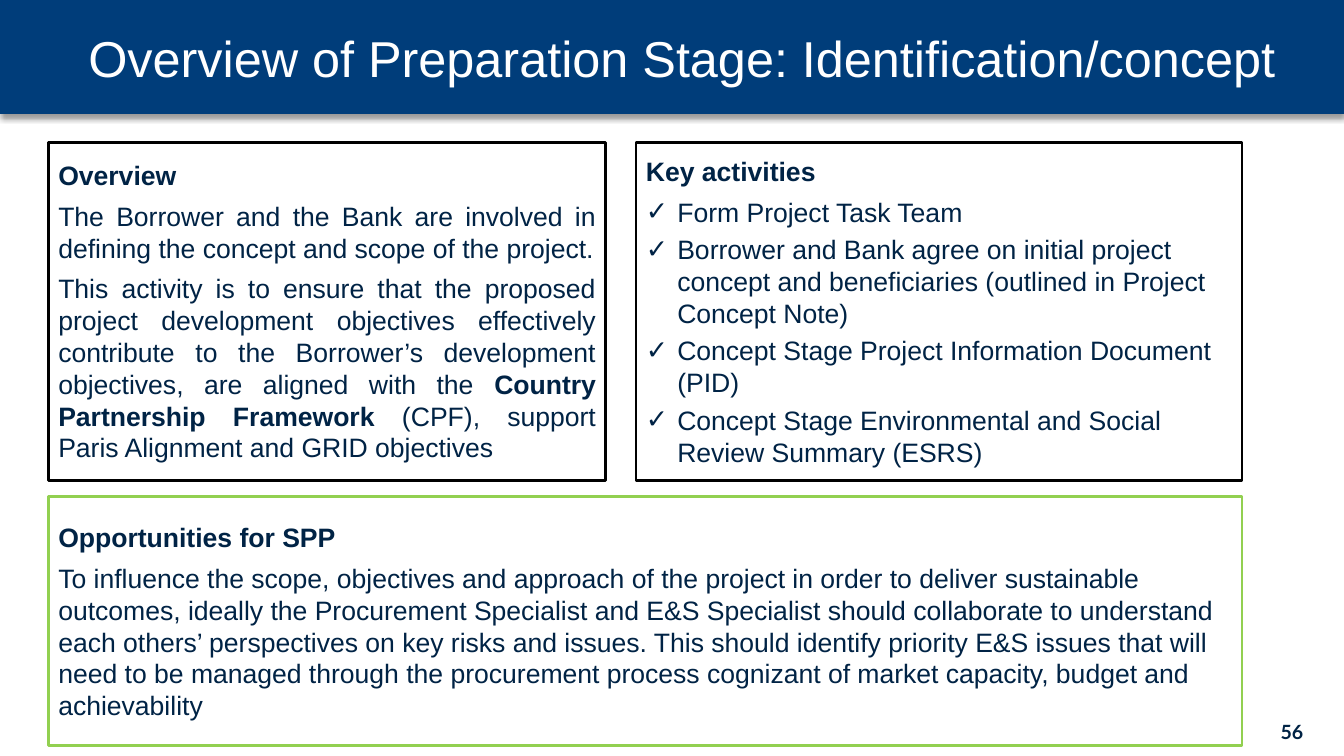
"""Build the slide on the identification and concept stage of a project."""
from lxml import etree
from pptx import Presentation
from pptx import util as u
from pptx.dml.color import RGBColor
from pptx.enum import shapes, text
from pptx.oxml.ns import qn

TITLE = "Overview of Preparation Stage: Identification/concept"
NUMBER = "56"
OVERVIEW = [
    [("Overview", True)],
    [("The Borrower and the Bank are involved in defining the concept and scope of the project.", False)],
    [("This activity is to ensure that the proposed project development objectives effectively "
      "contribute to the Borrower’s development objectives, are aligned with the ", False),
     ("Country Partnership Framework", True),
     (" (CPF), support Paris Alignment and GRID objectives", False)],
]
ACTIONS = [
    [("Key activities", True)],
    [("Form Project Task Team", False)],
    [("Borrower and Bank agree on initial project concept and beneficiaries "
      "(outlined in Project Concept Note)", False)],
    [("Concept Stage Project Information Document (PID)", False)],
    [("Concept Stage Environmental and Social Review Summary (ESRS)", False)],
]
CHANCES = [
    [("Opportunities for SPP", True)],
    [("To influence the scope, objectives and approach of the project in order to deliver "
      "sustainable outcomes, ideally the Procurement Specialist and E&S Specialist should "
      "collaborate to understand each others’ perspectives on key risks and issues. This should "
      "identify priority E&S issues that will need to be managed through the procurement process "
      "cognizant of market capacity, budget and achievability", False)],
]


class Theme:
    """Colours, fonts and type sizes."""
    navy, ink, white = "003D7A", "002345", "FFFFFF"
    black, green = "000000", "92D050"
    face, digit = "Arial", "Lato"
    head, body, small = 36, 19, 14


WIDE, HIGH, BAR = 33.87, 19.05, 2.87
LEFT, TOP, GAP = 1.22, 3.59, 0.76
FIRST, SECOND, TALL = 14.05, 15.27, 8.51
LOW, DEEP = 12.52, 6.27
J, L = text.PP_ALIGN.JUSTIFY, text.PP_ALIGN.LEFT
PANELS = [
    (OVERVIEW, (LEFT, TOP, FIRST, TALL), Theme.black, J, 6, False),
    (ACTIONS, (LEFT + FIRST + GAP, TOP, SECOND, TALL), Theme.black, L, 4, True),
    (CHANCES, (LEFT, LOW, FIRST + GAP + SECOND, DEEP), Theme.green, L, 6, False),
]


def put(item, **attrs):
    """Set each named attribute on an item."""
    for name, value in attrs.items():
        setattr(item, name, value)


def place(shape, box):
    """Move and size a shape in centimetres."""
    put(shape, **dict(zip(("left", "top", "width", "height"), map(u.Cm, box))))


def paint(fill, tone):
    """Give a fill one solid colour."""
    fill.solid()
    fill.fore_color.rgb = RGBColor.from_string(tone)


def style(font, size, tone, face=Theme.face, bold=False):
    """Format a font."""
    put(font, size=u.Pt(size), name=face, bold=bold)
    font.color.rgb = RGBColor.from_string(tone)


def frame(shape, margins):
    """Centre the text vertically, wrap it and set its margins."""
    sides = ("margin_left", "margin_top", "margin_right", "margin_bottom")
    put(shape.text_frame, word_wrap=True, auto_size=text.MSO_AUTO_SIZE.NONE,
        vertical_anchor=text.MSO_ANCHOR.MIDDLE, **dict(zip(sides, map(u.Cm, margins))))


def shade(shape):
    """Add a soft shadow below a shape."""
    shape.shadow.inherit = False
    glow = etree.SubElement(shape.element.spPr.find(qn("a:effectLst")), qn("a:outerShdw"),
                            blurRad=str(u.Pt(4)), dist=str(u.Pt(3)), dir="5400000",
                            algn="t", rotWithShape="0")
    tone = etree.SubElement(glow, qn("a:srgbClr"), val=Theme.black)
    etree.SubElement(tone, qn("a:alpha"), val="40000")


def tick(para):
    """Give a paragraph a hanging check mark."""
    props = para._p.get_or_add_pPr()
    hang = str(u.Cm(0.79))
    props.set("marL", hang)
    props.set("indent", "-" + hang)
    etree.SubElement(props, qn("a:buFont"), typeface=Theme.face)
    etree.SubElement(props, qn("a:buChar"), char="✓")


def panel(slide, rows, box, edge, align, gap, ticks):
    """Draw one outlined panel with its heading and paragraphs."""
    shape = slide.shapes.add_shape(shapes.MSO_SHAPE.RECTANGLE, *map(u.Cm, box))
    shape.shadow.inherit = False
    paint(shape.fill, Theme.white)
    paint(shape.line.fill, edge)
    shape.line.width = u.Pt(2)
    frame(shape, (0.25, 0.13, 0.25, 0.13))
    for i, row in enumerate(rows):
        para = shape.text_frame.paragraphs[0] if i == 0 else shape.text_frame.add_paragraph()
        last = i == len(rows) - 1 and align == L
        after = 0 if last else gap if i else 6
        put(para, alignment=align, space_after=u.Pt(after))
        if ticks and i:
            tick(para)
        for words, bold in row:
            run = para.add_run()
            run.text = words
            style(run.font, Theme.body, Theme.ink, bold=bold)


def label(shape, words, margins, *look):
    """Fill a shape with one centred line."""
    frame(shape, margins)
    para = shape.text_frame.paragraphs[0]
    put(para, text=words, alignment=text.PP_ALIGN.CENTER)
    style(para.runs[0].font, *look)


def main():
    """Build and save the slide."""
    deck = Presentation()
    put(deck, slide_width=u.Cm(WIDE), slide_height=u.Cm(HIGH))
    slide = deck.slides.add_slide(deck.slide_layouts[5])
    title = slide.shapes.title
    place(title, (0, 0, WIDE, BAR))
    paint(title.fill, Theme.navy)
    shade(title)
    label(title, TITLE, (0.76, 0.13, 0.25, 0.13), Theme.head, Theme.white)
    for item in PANELS:
        panel(slide, *item)
    page = slide.shapes.add_textbox(*map(u.Cm, (31.72, 18.01, 1.68, 0.76)))
    label(page, NUMBER, (0, 0.1, 0, 0), Theme.small, Theme.ink, Theme.digit, True)
    deck.save("out.pptx")


if __name__ == "__main__":
    main()
